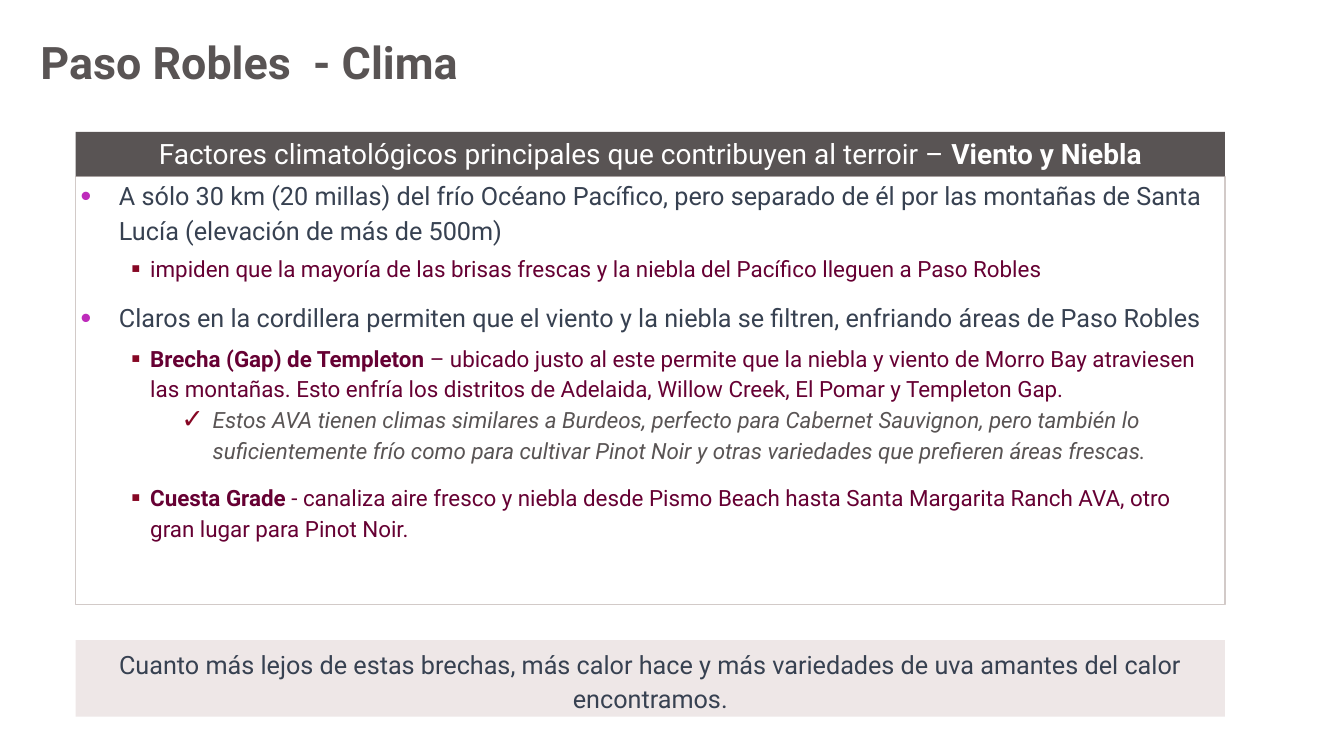
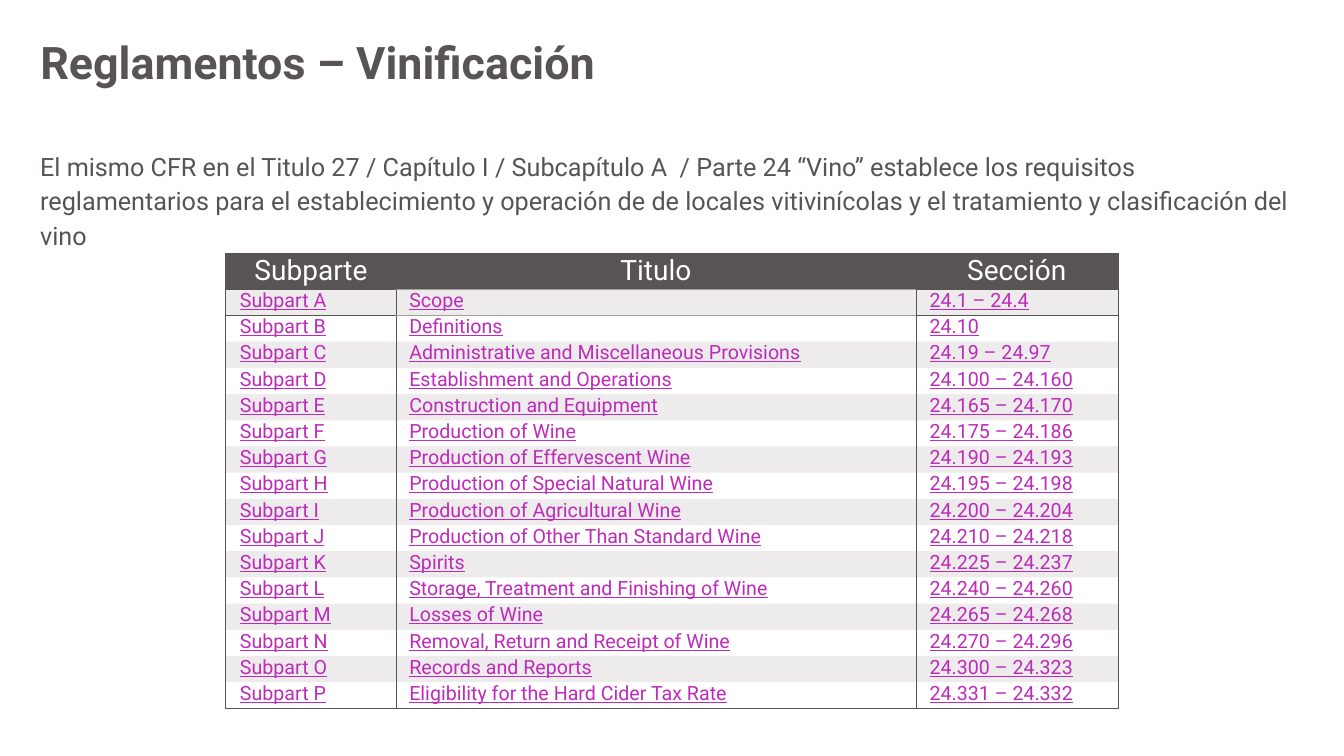
from lxml import etree
from pptx import Presentation
from pptx import util as u
from pptx.dml.color import RGBColor
from pptx.enum import shapes, text
from pptx.oxml.ns import qn

FONT = "Roboto"
COLORS = {
    "gray": "595454", "white": "FFFFFF", "slate": "374151", "wine": "660033",
    "violet": "BE2BBB", "crimson": "860724", "frame": "D2CAC8",
    "blush": "EEE7E7", "stripe": "A69F9F",
}
# Per list level: text indent, hanging indent, bullet, bullet colour, size, colour
LEVELS = [
    (0.38, 0.38, "•", "violet", 18, "slate"),
    (0.69, 0.19, "▪", "crimson", 16, "wine"),
    (1.31, 0.31, "✓", "crimson", 16, "gray"),
]
LEFT, WIDTH = 0.75, 11.4
BODY_SPACING = 1.14
NO_STYLE = "{2D5ABB26-0587-4C30-8999-92F81FD0307C}"


def rgb(name):
    return RGBColor.from_string(COLORS[name])


def add_xml(parent, tag, **attributes):
    return etree.SubElement(parent, qn(tag), attributes)


def write(para, content, size=18, color="gray", bold=False, italic=False,
          underline=False, align=text.PP_ALIGN.LEFT, spacing=1.0, before=0, after=0):
    """Fill a paragraph; content is a string or a list of (string, bold) pairs."""
    para.alignment = align
    para.line_spacing = spacing
    para.space_before, para.space_after = u.Pt(before), u.Pt(after)
    spans = [(content, bold)] if isinstance(content, str) else content
    for words, strong in spans:
        span = para.add_run()
        span.text = words
        font = span.font
        font.name, font.size, font.color.rgb = FONT, u.Pt(size), rgb(color)
        font.bold, font.italic, font.underline = strong, italic, underline


def set_frame(frame, margins):
    frame.word_wrap = True
    frame.auto_size = text.MSO_AUTO_SIZE.NONE
    frame.vertical_anchor = text.MSO_ANCHOR.TOP
    (frame.margin_left, frame.margin_top,
     frame.margin_right, frame.margin_bottom) = map(u.Inches, margins)


def place(box, *bounds):
    box.left, box.top, box.width, box.height = map(u.Inches, bounds)


def set_bullet(para, level):
    indent, hanging, symbol, color = LEVELS[level][:4]
    para.level = level
    props = para._p.get_or_add_pPr()
    props.set("marL", str(u.Inches(indent)))
    props.set("indent", str(-u.Inches(hanging)))
    add_xml(add_xml(props, "a:buClr"), "a:srgbClr", val=COLORS[color])
    add_xml(props, "a:buSzPct", val="121000")
    add_xml(props, "a:buFont", typeface="Arial")
    add_xml(props, "a:buChar", char=symbol)


def set_borders(cell, sides):
    """Draw 1 pt cell borders; sides maps L, R, T, B to colour names."""
    props = cell._tc.get_or_add_tcPr()
    for side in "LRTB":
        if side in sides:
            line = add_xml(props, f"a:ln{side}", w=str(u.Pt(1)))
            fill = add_xml(line, "a:solidFill")
            add_xml(fill, "a:srgbClr", val=COLORS[sides[side]])


def set_cell_fill(cell, color=None, opacity=100):
    if color is None:
        cell.fill.background()
        return
    cell.fill.solid()
    cell.fill.fore_color.rgb = rgb(color)
    if opacity < 100:
        shade = cell._tc.tcPr.find(qn("a:solidFill")).find(qn("a:srgbClr"))
        add_xml(shade, "a:alpha", val=str(opacity * 1000))


class Deck:
    def __init__(self):
        self.deck = Presentation()
        self.deck.slide_width = u.Inches(13.33)
        self.deck.slide_height = u.Inches(7.5)
        self.page = None

    def add_page(self, title, layout):
        self.page = self.deck.slides.add_slide(self.deck.slide_layouts[layout])
        box = self.page.shapes.title
        place(box, 0.4, 0.4, 12.53, 1)
        set_frame(box.text_frame, (0, 0, 0, 0))
        write(box.text_frame.paragraphs[0], title, size=32, bold=True, spacing=0.9)

    def add_band(self, content, top, height, fill, **style):
        box = self.page.shapes.add_shape(
            shapes.MSO_SHAPE.RECTANGLE,
            *map(u.Inches, (LEFT, top, WIDTH, height)))
        box.shadow.inherit = False
        box.fill.solid()
        box.fill.fore_color.rgb = rgb(fill)
        box.line.fill.background()
        set_frame(box.text_frame, (0.1, 0.05, 0.1, 0.05))
        write(box.text_frame.paragraphs[0], content,
              align=text.PP_ALIGN.CENTER, **style)

    def add_list(self, items, top, height):
        """Fill the body placeholder with (level, space before, content) items."""
        box = self.page.placeholders[1]
        place(box, LEFT, top, WIDTH, height)
        box.line.color.rgb = rgb("frame")
        box.line.width = u.Pt(0.75)
        frame = box.text_frame
        set_frame(frame, (0.05, 0, 0.1, 0))
        for index, (level, before, content) in enumerate(items):
            para = frame.add_paragraph() if index else frame.paragraphs[0]
            set_bullet(para, level)
            size, color = LEVELS[level][4:]
            write(para, content, size=size, color=color, italic=level == 2,
                  spacing=BODY_SPACING, before=before)

    def add_text(self, content, *bounds, **style):
        box = self.page.shapes.add_textbox(*map(u.Inches, bounds))
        set_frame(box.text_frame, (0.1, 0.05, 0.1, 0.05))
        write(box.text_frame.paragraphs[0], content, **style)

    def add_table(self, rows, left, top, widths, header_height, row_height):
        last = len(rows) - 1
        height = header_height + last * row_height
        table = self.page.shapes.add_table(
            len(rows), len(widths),
            *map(u.Inches, (left, top, sum(widths), height))).table
        table.horz_banding = False
        table._tbl.tblPr.find(qn("a:tableStyleId")).text = NO_STYLE
        for column, width in zip(table.columns, widths):
            column.width = u.Inches(width)
        for r, values in enumerate(rows):
            table.rows[r].height = u.Inches(row_height if r else header_height)
            for c, value in enumerate(values):
                cell = table.cell(r, c)
                cell.vertical_anchor = text.MSO_ANCHOR.TOP
                inset = 0 if c else 0.01
                cell.margin_left = u.Inches(inset + (0.13 if r else 0))
                cell.margin_right = u.Inches(0.01)
                cell.margin_top = cell.margin_bottom = 0
                sides = {"L": "gray", "R": "gray"}
                header_rule = "stripe" if c == 1 else "gray"
                if r == 0:
                    sides.update(T="gray", B=header_rule)
                elif r == 1:
                    sides["T"] = header_rule
                if r == last or (r == 1 and c != 1):
                    sides["B"] = "gray"
                set_borders(cell, sides)
                para = cell.text_frame.paragraphs[0]
                if r == 0:
                    set_cell_fill(cell, "gray")
                    write(para, value, size=20, color="white",
                          align=text.PP_ALIGN.CENTER)
                else:
                    set_cell_fill(cell, "stripe" if r % 2 else None, 20)
                    write(para, value, size=14, color="violet", underline=True)


CLIMATE = [
    (0, 0, "A sólo 30 km (20 millas) del frío Océano Pacífico, pero separado de él por "
           "las montañas de Santa Lucía (elevación de más de 500m)"),
    (1, 4, "impiden que la mayoría de las brisas frescas y la niebla del Pacífico "
           "lleguen a Paso Robles"),
    (0, 12, "Claros en la cordillera permiten que el viento y la niebla se filtren, "
            "enfriando áreas de Paso Robles"),
    (1, 6, [("Brecha (Gap) de Templeton ", True),
            ("– ubicado justo al este permite que la niebla y viento de Morro Bay "
             "atraviesen las montañas. Esto enfría los distritos de Adelaida, Willow "
             "Creek, El Pomar y Templeton Gap.", False)]),
    (2, 0, "Estos AVA tienen climas similares a Burdeos, perfecto para Cabernet "
           "Sauvignon, pero también lo suficientemente frío como para cultivar Pinot "
           "Noir y otras variedades que prefieren áreas frescas."),
    (1, 12, [("Cuesta Grade ", True),
             ("- canaliza aire fresco y niebla desde Pismo Beach hasta Santa Margarita "
              "Ranch AVA, otro gran lugar para Pinot Noir.", False)]),
]
SUBPARTS = [
    ("Scope", "24.1 – 24.4"),
    ("Definitions", "24.10"),
    ("Administrative and Miscellaneous Provisions", "24.19 – 24.97"),
    ("Establishment and Operations", "24.100 – 24.160"),
    ("Construction and Equipment", "24.165 – 24.170"),
    ("Production of Wine", "24.175 – 24.186"),
    ("Production of Effervescent Wine", "24.190 – 24.193"),
    ("Production of Special Natural Wine", "24.195 – 24.198"),
    ("Production of Agricultural Wine", "24.200 – 24.204"),
    ("Production of Other Than Standard Wine", "24.210 – 24.218"),
    ("Spirits", "24.225 – 24.237"),
    ("Storage, Treatment and Finishing of Wine", "24.240 – 24.260"),
    ("Losses of Wine", "24.265 – 24.268"),
    ("Removal, Return and Receipt of Wine", "24.270 – 24.296"),
    ("Records and Reports", "24.300 – 24.323"),
    ("Eligibility for the Hard Cider Tax Rate", "24.331 – 24.332"),
]


def build_climate(deck):
    deck.add_page("Paso Robles  - Clima", layout=1)
    deck.add_band(
        [("Factores climatológicos principales que contribuyen al terroir – ", False),
         ("Viento y Niebla", True)],
        1.31, 0.44, "gray", size=20, color="white")
    deck.add_list(CLIMATE, 1.75, 4.25)
    deck.add_band(
        "Cuanto más lejos de estas brechas, más calor hace y más variedades de uva "
        "amantes del calor encontramos.",
        6.35, 0.76, "blush", color="slate", spacing=BODY_SPACING)


def build_rules(deck):
    deck.add_page("Reglamentos – Vinificación", layout=5)
    rows = [("Subparte", "Titulo", "Sección")]
    rows += [(f"Subpart {letter}", *subpart)
             for letter, subpart in zip("ABCDEFGHIJKLMNOP", SUBPARTS)]
    deck.add_table(rows, 2.24, 2.52, (1.69, 5.16, 2), 0.35, 0.26)
    deck.add_text(
        "El mismo CFR en el Titulo 27 / Capítulo I / Subcapítulo A  / Parte 24 “Vino” "
        "establece los requisitos reglamentarios para el establecimiento y operación de "
        "de locales vitivinícolas y el tratamiento y clasificación del vino",
        0.3, 1.41, 12.63, 1.11, spacing=BODY_SPACING, after=6)


def main():
    deck = Deck()
    build_climate(deck)
    build_rules(deck)
    deck.deck.save("out.pptx")


if __name__ == "__main__":
    main()
